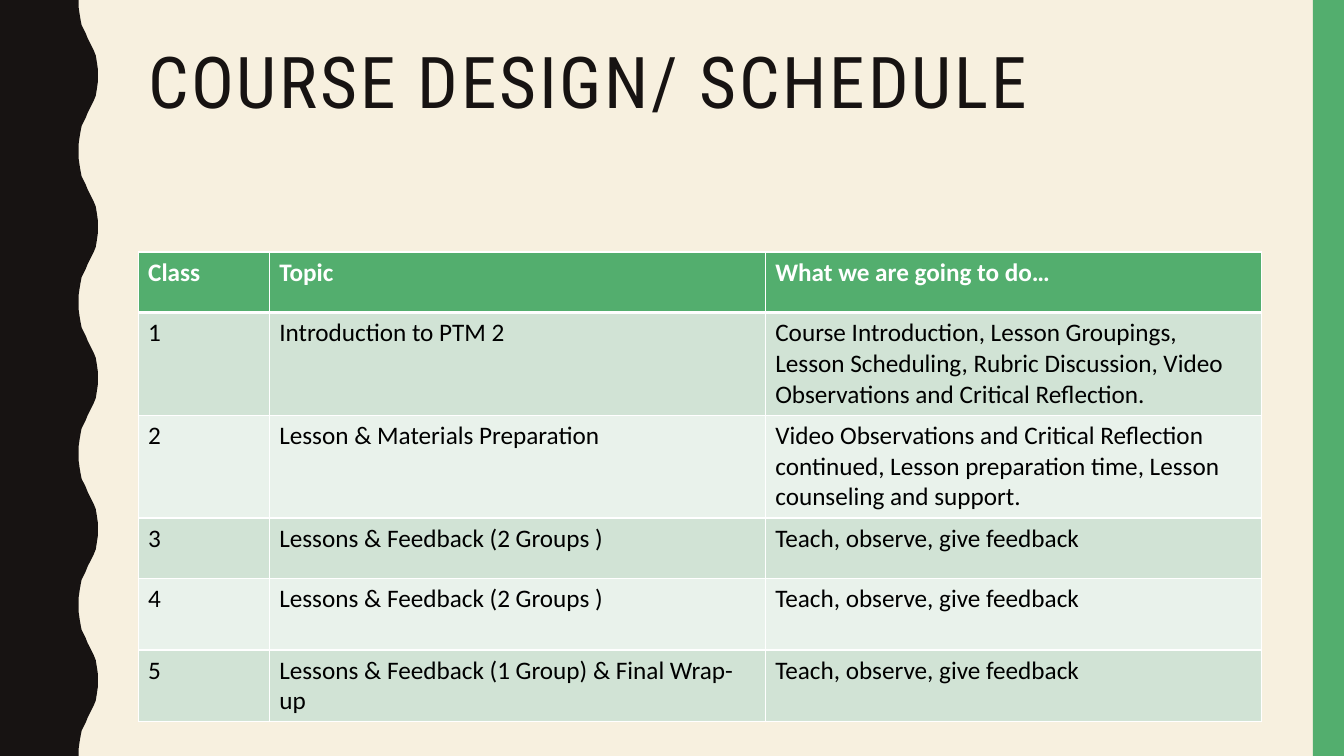
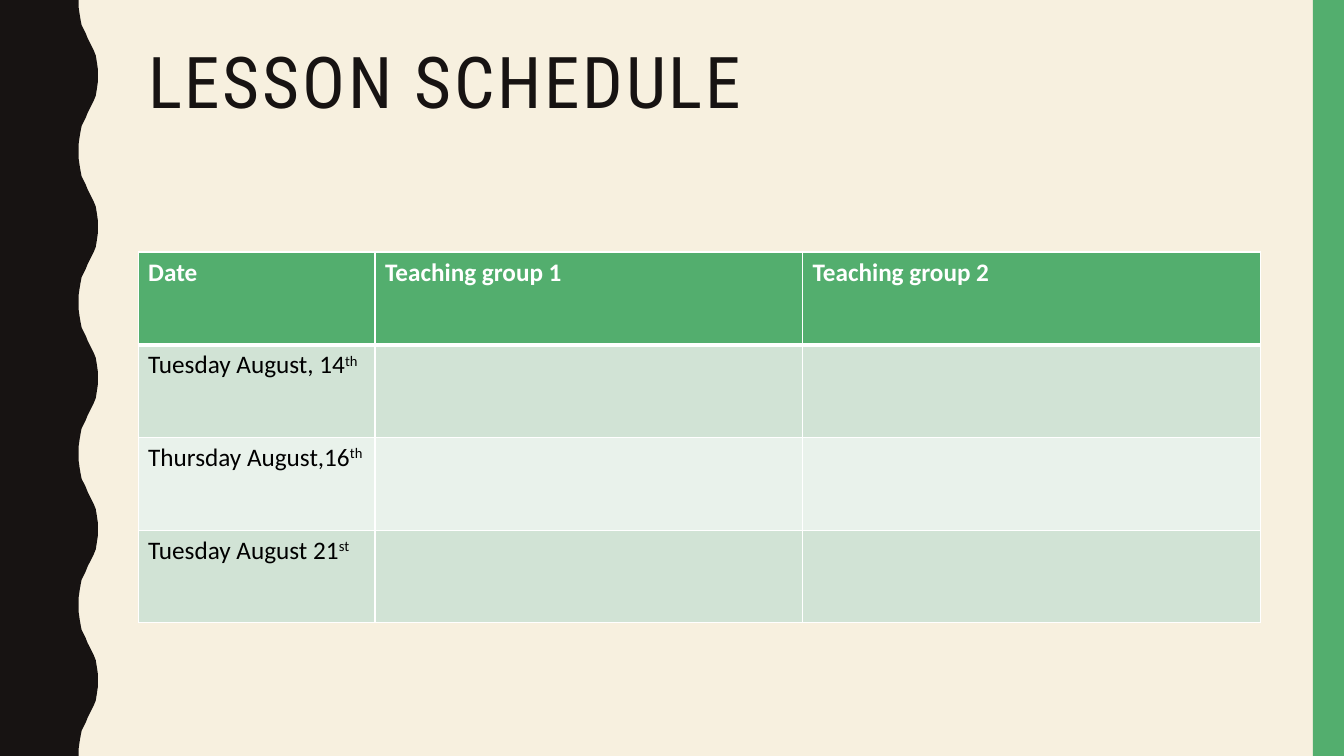
from lxml.etree import SubElement
from pptx import Presentation
from pptx.dml.color import RGBColor
from pptx.enum.shapes import MSO_SHAPE as Preset
from pptx.enum.text import MSO_ANCHOR as Anchor
from pptx.oxml import parse_xml
from pptx.oxml.ns import nsdecls, qn
from pptx.util import Inches, Pt

# Palette and fonts
CREAM = RGBColor(0xF7, 0xF0, 0xDF)
INK = RGBColor(0x17, 0x13, 0x12)
GREEN = RGBColor(0x53, 0xAE, 0x6E)
BAND_DARK = RGBColor(0xD1, 0xE3, 0xD5)
BAND_LIGHT = RGBColor(0xE9, 0xF2, 0xEB)
WHITE = RGBColor(0xFF, 0xFF, 0xFF)
BLACK = RGBColor(0x00, 0x00, 0x00)
TITLE_FORMAT = {"name": "Roboto Condensed", "size": Pt(51)}
HEADER_FORMAT = {"name": "Calibri", "size": Pt(18), "bold": True}
BODY_FORMAT = {"name": "Calibri", "size": Pt(18), "bold": False}

# Shared boxes: left, top, width, height in inches
SLIDE_WIDTH, SLIDE_HEIGHT = 13.33, 7.5
WAVE_BOX = (0, 0, 0.97, SLIDE_HEIGHT)
STRIPE_BOX = (13.02, 0, 0.31, SLIDE_HEIGHT)
TITLE_BOX = (1.37, 0.42, 11.13, 1.63)
TABLE_LEFT, TABLE_TOP = 1.37, 2.5

# Half a wave, as (distance down, distance out from the trough)
WAVE_PERIOD, WAVE_DEPTH = 1.5, 0.19
HALF_WAVE = [(0, 0), (0.07, 0), (0.14, 0.01), (0.2, 0.02), (0.25, 0.03),
             (0.29, 0.05), (0.33, 0.07), (0.38, 0.09), (0.42, 0.11),
             (0.46, 0.13), (0.5, 0.15), (0.55, 0.17), (0.61, 0.18),
             (0.68, WAVE_DEPTH), (0.75, WAVE_DEPTH)]

COURSE_ROWS = [
    ("Class", "Topic", "What we are going to do…"),
    ("1", "Introduction to PTM 2",
     "Course Introduction, Lesson Groupings, Lesson Scheduling, "
     "Rubric Discussion, Video Observations and Critical Reflection."),
    ("2", "Lesson & Materials Preparation",
     "Video Observations and Critical Reflection continued, "
     "Lesson preparation time, Lesson counseling and support."),
    ("3", "Lessons & Feedback (2 Groups )", "Teach, observe, give feedback"),
    ("4", "Lessons & Feedback (2 Groups )", "Teach, observe, give feedback"),
    ("5", "Lessons & Feedback (1 Group) & Final Wrap-up",
     "Teach, observe, give feedback"),
]
# A pair holds a text and its superscript
LESSON_ROWS = [
    ("Date", "Teaching group 1", "Teaching group 2"),
    (("Tuesday August, 14", "th"), "", ""),
    (("Thursday August,16", "th"), "", ""),
    (("Tuesday August 21", "st"), "", ""),
]


def apply_format(font, values, color):
    for name, value in values.items():
        setattr(font, name, value)
    font.color.rgb = color


def paint(shape, color):
    shape.shadow.inherit = False
    shape.fill.solid()
    shape.fill.fore_color.rgb = color
    shape.line.fill.background()


def add_wave(slide, box):
    """Dark band whose right edge is a repeating wave."""
    left, top, width, height = box
    trough = left + width - WAVE_DEPTH
    points = [(trough, top)]
    for number in range(round(height / WAVE_PERIOD)):
        start = top + number * WAVE_PERIOD
        points += [(trough + out, start + down) for down, out in HALF_WAVE]
        points += [(trough + out, start + WAVE_PERIOD - down)
                   for down, out in reversed(HALF_WAVE)]
    points.append((left, top + height))
    builder = slide.shapes.build_freeform(Inches(left), Inches(top))
    builder.add_line_segments([(Inches(x), Inches(y)) for x, y in points])
    paint(builder.convert_to_shape(), INK)


def add_stripe(slide, box):
    paint(slide.shapes.add_shape(Preset.RECTANGLE, *map(Inches, box)), GREEN)


def add_title(slide, box, text):
    frame = slide.shapes.add_textbox(*map(Inches, box)).text_frame
    frame.word_wrap = True
    frame.vertical_anchor = Anchor.TOP
    paragraph = frame.paragraphs[0]
    paragraph.line_spacing = 0.9
    run = paragraph.add_run()
    run.text = text
    apply_format(run.font, TITLE_FORMAT, INK)
    run.font._element.set("spc", "200")


def set_borders(cell, widths):
    """Put white borders, given in points by side, ahead of the fill."""
    properties = cell._tc.get_or_add_tcPr()
    for index, (side, width) in enumerate(widths.items()):
        line = parse_xml(f'<a:ln{side} {nsdecls("a")} w="{Pt(width)}"/>')
        fill = SubElement(line, qn("a:solidFill"))
        SubElement(fill, qn("a:srgbClr")).set("val", str(WHITE))
        properties.insert(index, line)


def fill_cell(cell, content, row):
    """Write and colour one cell; row 0 is the header."""
    values, color = (BODY_FORMAT, BLACK) if row else (HEADER_FORMAT, WHITE)
    band = (BAND_DARK if row % 2 else BAND_LIGHT) if row else GREEN
    cell.fill.solid()
    cell.fill.fore_color.rgb = band
    set_borders(cell, {"L": 1, "R": 1, "T": 3 if row == 1 else 1,
                       "B": 1 if row else 3})
    parts = (content,) if isinstance(content, str) else content
    for index, text in enumerate(parts):
        if text:
            run = cell.text_frame.paragraphs[0].add_run()
            run.text = text
            apply_format(run.font, values, color)
            if index:
                run.font._element.set("baseline", "30000")


def add_schedule(slide, left, top, rows, widths, heights):
    box = (left, top, sum(widths), sum(heights))
    table = slide.shapes.add_table(len(rows), len(widths),
                                   *map(Inches, box)).table
    table.horz_banding = False
    for column, width in zip(table.columns, widths):
        column.width = Inches(width)
    for index, (contents, height) in enumerate(zip(rows, heights)):
        table.rows[index].height = Inches(height)
        for cell, content in zip(table.rows[index].cells, contents):
            fill_cell(cell, content, index)


def add_schedule_slide(presentation, title, rows, widths, heights):
    slide = presentation.slides.add_slide(presentation.slide_layouts[6])
    add_wave(slide, WAVE_BOX)
    add_stripe(slide, STRIPE_BOX)
    add_title(slide, TITLE_BOX, title)
    add_schedule(slide, TABLE_LEFT, TABLE_TOP, rows, widths, heights)


def main():
    presentation = Presentation()
    presentation.slide_width = Inches(SLIDE_WIDTH)
    presentation.slide_height = Inches(SLIDE_HEIGHT)
    background = presentation.slide_master.background.fill
    background.solid()
    background.fore_color.rgb = CREAM

    add_schedule_slide(presentation, "COURSE DESIGN/ SCHEDULE", COURSE_ROWS,
                       (1.3, 4.92, 4.92), (0.6, 1.02, 1.02, 0.6, 0.71, 0.71))
    add_schedule_slide(presentation, "LESSON SCHEDULE", LESSON_ROWS,
                       (2.35, 4.24, 4.54), [0.92] * len(LESSON_ROWS))
    presentation.save("out.pptx")


if __name__ == "__main__":
    main()
